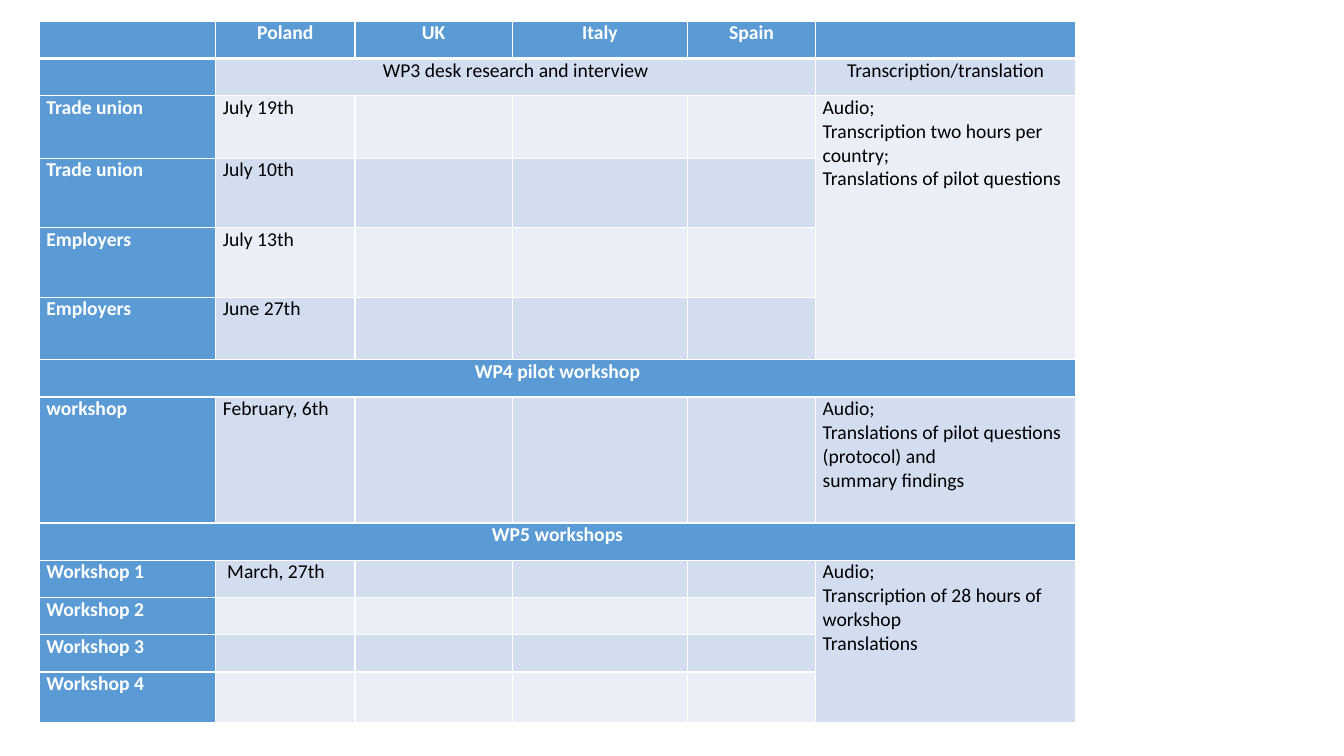
from lxml.etree import SubElement
from pptx import Presentation
from pptx.dml.color import RGBColor
from pptx.enum.text import PP_ALIGN
from pptx.oxml.ns import qn
from pptx.util import Inches, Pt

BLUE = RGBColor(0x5B, 0x9B, 0xD5)
MID = RGBColor(0xD2, 0xDE, 0xEF)
PALE = RGBColor(0xEA, 0xEF, 0xF7)
WHITE = RGBColor(0xFF, 0xFF, 0xFF)
BLACK = RGBColor(0, 0, 0)

COLS = [1.75, 1.38, 1.56, 1.74, 1.27, 2.58]
# Height and texts of each row
ROWS = [
    (0.37, ["", "Poland", "UK", "Italy", "Spain"]),
    (0.37, ["", "WP3 desk research and interview", "", "", "",
            "Transcription/translation"]),
    (0.62, ["Trade union", "July 19th", "", "", "",
            "Audio;\nTranscription two hours per country;\n"
            "Translations of pilot questions"]),
    (0.69, ["Trade union", "July 10th"]),
    (0.69, ["Employers", "July 13th"]),
    (0.62, ["Employers", "June 27th"]),
    (0.37, ["WP4 pilot workshop"]),
    (1.25, ["workshop", "February, 6th", "", "", "",
            "Audio;\nTranslations of pilot questions (protocol) and\n"
            "summary findings"]),
    (0.37, ["WP5 workshops"]),
    (0.37, ["Workshop 1", " March, 27th", "", "", "",
            "Audio;\nTranscription of 28 hours of workshop\nTranslations"]),
    (0.37, ["Workshop 2"]),
    (0.37, ["Workshop 3"]),
    (0.5, ["Workshop 4"]),
]
BANDS = (0, 6, 8)  # rows that are blue all the way across
MID_ROWS = BANDS + (1,)  # rows with centred text
# First and last cell of each merged block
SPANS = [((1, 1), (1, 4)), ((2, 5), (5, 5)), ((6, 0), (6, 5)),
         ((8, 0), (8, 5)), ((9, 5), (12, 5))]


def add_edges(cell, top, foot):
    """Draw white lines round a cell, with widths in points."""
    props = cell._tc.get_or_add_tcPr()
    for side, width in zip("LRTB", (1, 1, top, foot)):
        line = SubElement(props, qn(f"a:ln{side}"), w=str(Pt(width)))
        fill = SubElement(line, qn("a:solidFill"))
        SubElement(fill, qn("a:srgbClr"), val=str(WHITE))


def style_cell(cell, row, col):
    head = row in BANDS or col == 0
    cell.margin_left = cell.margin_right = Inches(0.07)
    cell.margin_top = cell.margin_bottom = 0
    add_edges(cell, 3 if row == 1 else 1, 3 if row == 0 else 1)
    cell.fill.solid()
    cell.fill.fore_color.rgb = BLUE if head else MID if row % 2 else PALE
    for para in cell.text_frame.paragraphs:
        para.alignment = PP_ALIGN.CENTER if row in MID_ROWS else PP_ALIGN.LEFT
        for run in para.runs:
            font = run.font
            font.name, font.size, font.bold = "Calibri", Pt(14), head
            font.color.rgb = WHITE if head else BLACK


def add_plan(slide, left, top, width, height):
    """Place the timetable in the given box."""
    table = slide.shapes.add_table(
        len(ROWS), len(COLS), left, top, width, height).table
    for col, size in zip(table.columns, COLS):
        col.width = Inches(size)

    # Texts and look of the cells
    for i, (size, texts) in enumerate(ROWS):
        table.rows[i].height = Inches(size)
        for j, text in enumerate(texts):
            table.cell(i, j).text_frame.text = text
        for j in range(len(COLS)):
            style_cell(table.cell(i, j), i, j)

    # Merged blocks
    for first, last in SPANS:
        table.cell(*first).merge(table.cell(*last))


def main():
    prs = Presentation()
    prs.slide_width, prs.slide_height = Inches(13.33), Inches(7.5)
    slide = prs.slides.add_slide(prs.slide_layouts[6])
    add_plan(slide, Inches(0.39), Inches(0.21), Inches(10.28), Inches(6.96))
    prs.save("out.pptx")


if __name__ == "__main__":
    main()
